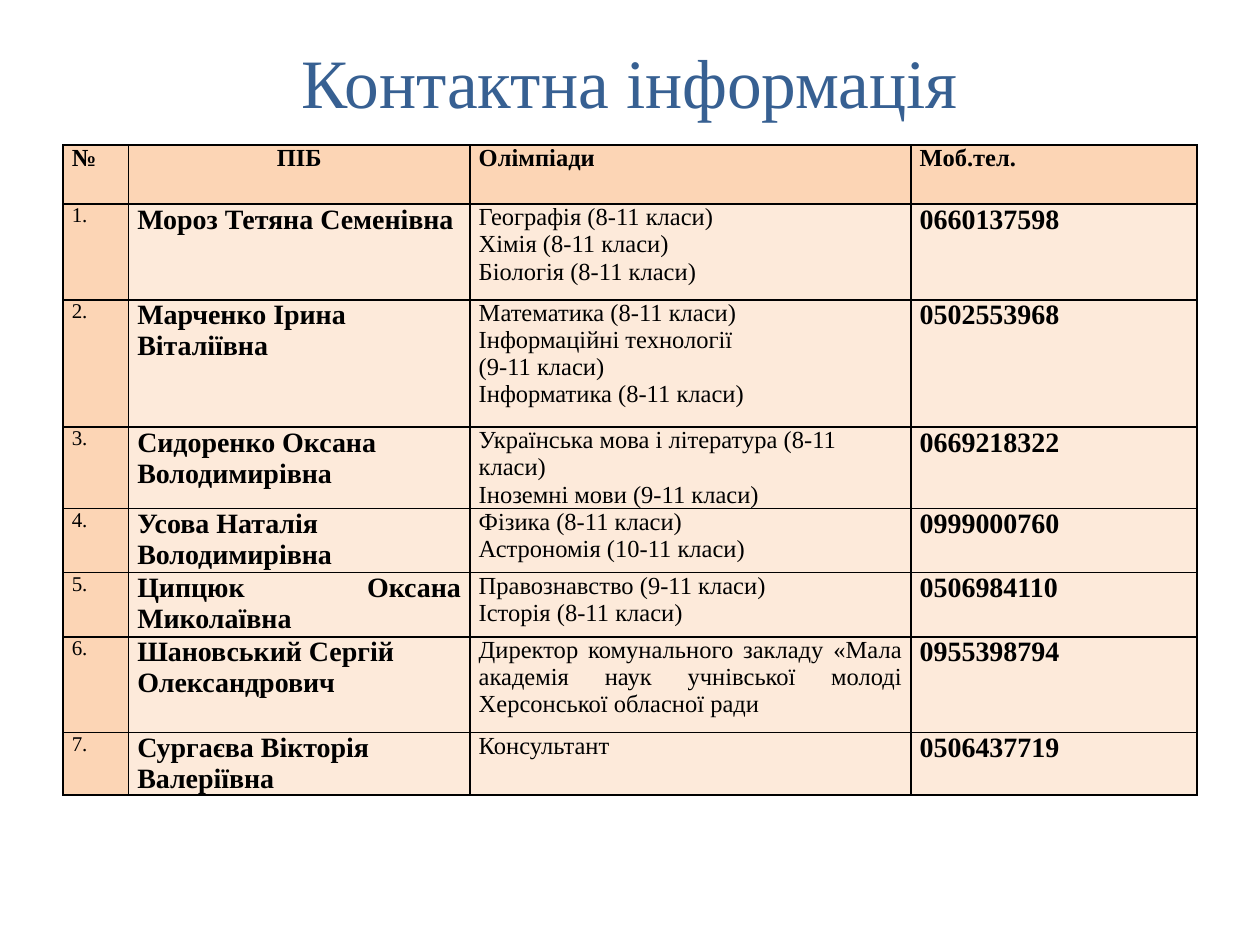
from lxml.etree import SubElement
from pptx import Presentation
from pptx.dml.color import RGBColor
from pptx.enum.text import MSO_ANCHOR, MSO_AUTO_SIZE, PP_ALIGN
from pptx.oxml.ns import qn
from pptx.util import Inches, Pt

COLORS = {"title": "376092", "text": "000000", "border": "000000",
          "accent": "FCD5B5", "body": "FDEADA"}
FONT = "Times New Roman"
LEFT, CENTER, JUSTIFY = PP_ALIGN.LEFT, PP_ALIGN.CENTER, PP_ALIGN.JUSTIFY


def format_paragraph(paragraph, alignment, size, color, bold=False):
    paragraph.alignment = alignment
    for run in paragraph.runs:
        for name, value in {"name": FONT, "size": Pt(size), "bold": bold}.items():
            setattr(run.font, name, value)
        run.font.color.rgb = RGBColor.from_string(COLORS[color])


def add_borders(cell):
    properties = cell._tc.get_or_add_tcPr()
    for index, side in enumerate(("lnL", "lnR", "lnT", "lnB")):
        line = properties.makeelement(qn(f"a:{side}"), {"w": str(Pt(1))})
        fill = SubElement(line, qn("a:solidFill"))
        SubElement(fill, qn("a:srgbClr"), val=COLORS["border"])
        properties.insert(index, line)


presentation = Presentation()
presentation.slide_width, presentation.slide_height = Inches(10), Inches(7.5)
slide = presentation.slides.add_slide(presentation.slide_layouts[5])

# Title
title = slide.shapes.title
title.left, title.top = Inches(0.5), Inches(0.3)
title.width, title.height = Inches(9), Inches(0.69)
title.text_frame.text = "Контактна інформація"
title.text_frame.auto_size = MSO_AUTO_SIZE.NONE
title.text_frame.vertical_anchor = MSO_ANCHOR.MIDDLE
format_paragraph(title.text_frame.paragraphs[0], CENTER, 39.6, "title")

# Contacts: name, name alignment, olympiads, olympiad alignment, phone
headers = ["№", "ПІБ", "Олімпіади", "Моб.тел."]
contacts = [
    ("Мороз Тетяна Семенівна", LEFT,
     "Географія (8-11 класи)\nХімія (8-11 класи)\nБіологія (8-11 класи)",
     JUSTIFY, "0660137598"),
    ("Марченко Ірина Віталіївна", LEFT,
     "Математика (8-11 класи)\nІнформаційні технології\n(9-11 класи)\n"
     "Інформатика (8-11 класи)", LEFT, "0502553968"),
    ("Сидоренко Оксана Володимирівна", LEFT,
     "Українська мова і література (8-11 класи)\nІноземні мови (9-11 класи)",
     LEFT, "0669218322"),
    ("Усова Наталія Володимирівна", LEFT,
     "Фізика (8-11 класи)\nАстрономія (10-11 класи)", JUSTIFY, "0999000760"),
    ("Ципцюк Оксана Миколаївна", JUSTIFY,
     "Правознавство (9-11 класи)\nІсторія (8-11 класи)", JUSTIFY, "0506984110"),
    ("Шановський Сергій Олександрович", LEFT,
     "Директор комунального закладу «Мала академія наук учнівської молоді "
     "Херсонської обласної ради", JUSTIFY, "0955398794"),
    ("Сургаєва Вікторія Валеріївна", LEFT, "Консультант", JUSTIFY, "0506437719"),
]

# Each cell: text, alignment, size, bold, fill
rows = [[(header, CENTER if header == "ПІБ" else JUSTIFY, 14, True, "accent")
         for header in headers]]
for number, (person, person_align, olympiads, olympiad_align, phone) in enumerate(contacts, 1):
    rows.append([(f"{number}.", JUSTIFY, 12, False, "accent"),
                 (person, person_align, 16, True, "body"),
                 (olympiads, olympiad_align, 14, False, "body"),
                 (phone, JUSTIFY, 16, True, "body")])

# Table
column_widths = [0.52, 2.71, 3.5, 2.27]
row_heights = [0.47, 0.76, 1.01, 0.51, 0.51, 0.51, 0.76, 0.25]
table = slide.shapes.add_table(
    len(rows), len(headers), Inches(0.5), Inches(1.15),
    Inches(sum(column_widths)), Inches(sum(row_heights))).table
for column, width in zip(table.columns, column_widths):
    column.width = Inches(width)
for row, height in zip(table.rows, row_heights):
    row.height = Inches(height)

cell_format = {"margin_left": Inches(0.07), "margin_right": Inches(0.07),
               "margin_top": 0, "margin_bottom": 0,
               "vertical_anchor": MSO_ANCHOR.TOP}
for row, row_values in zip(table.rows, rows):
    for cell, (text, alignment, size, bold, fill) in zip(row.cells, row_values):
        cell.text = text
        for name, value in cell_format.items():
            setattr(cell, name, value)
        cell.fill.solid()
        cell.fill.fore_color.rgb = RGBColor.from_string(COLORS[fill])
        add_borders(cell)
        for paragraph in cell.text_frame.paragraphs:
            format_paragraph(paragraph, alignment, size, "text", bold)

presentation.save("out.pptx")
